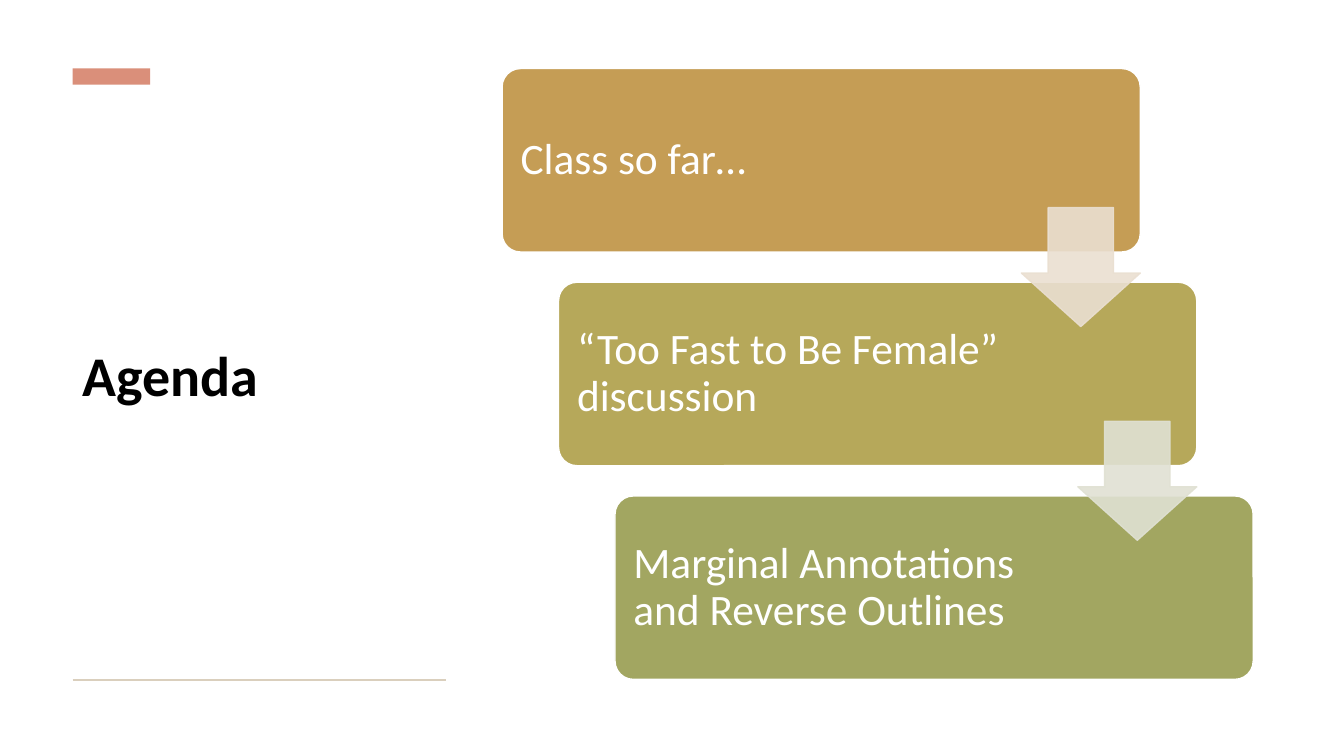
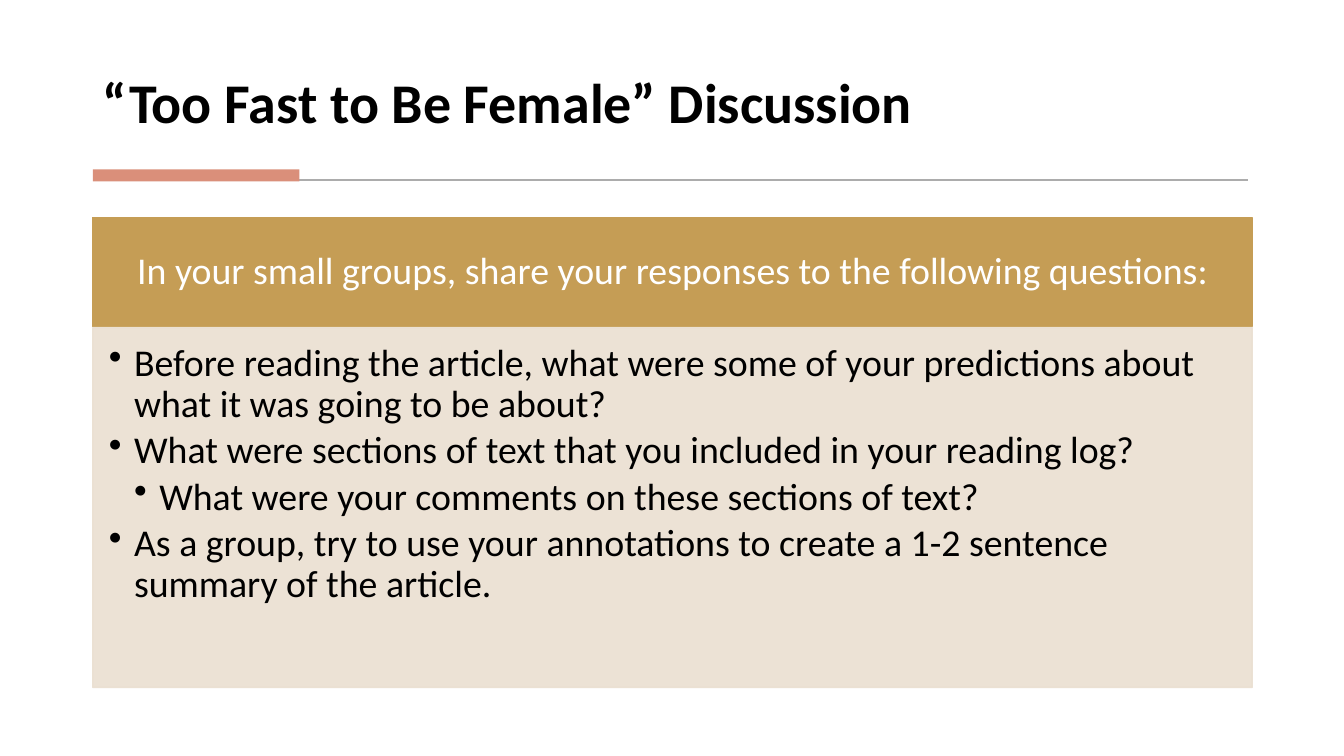
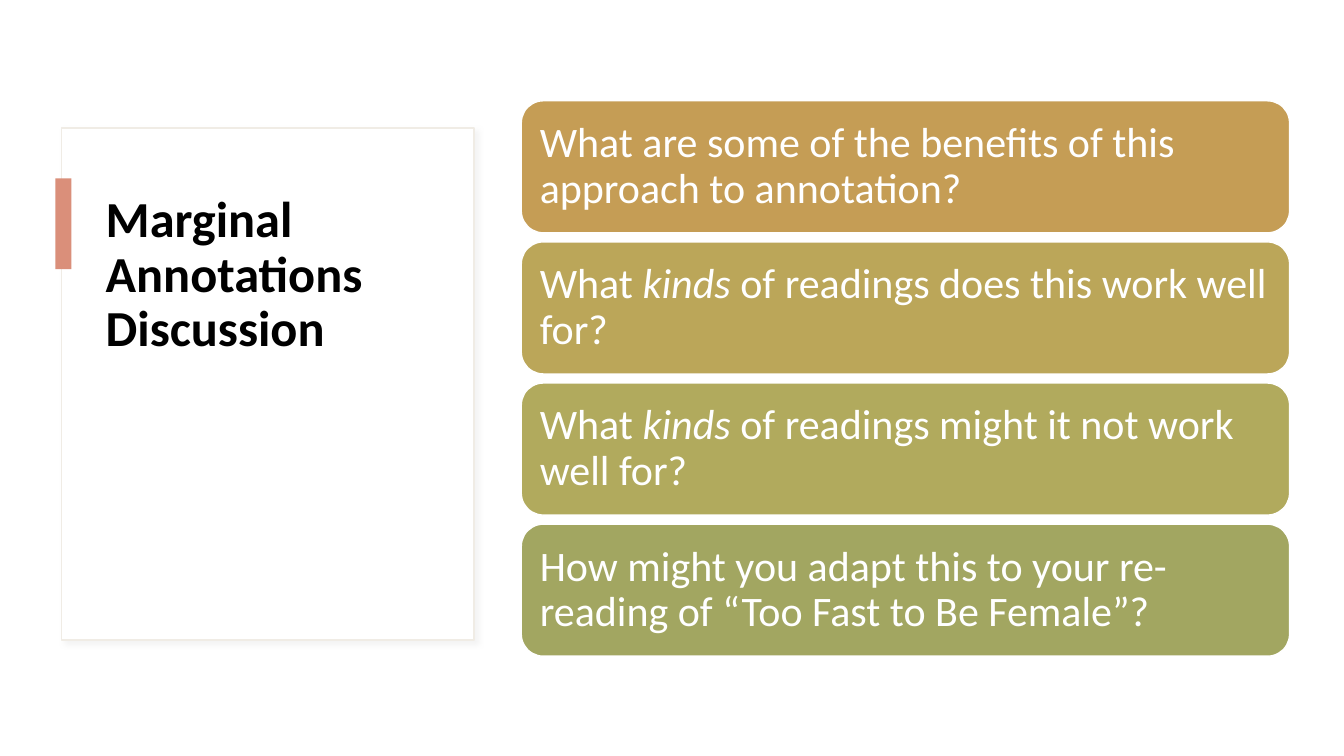
from lxml.etree import SubElement
from pptx import Presentation
from pptx.dml.color import RGBColor
from pptx.enum.shapes import MSO_CONNECTOR, MSO_SHAPE
from pptx.enum.text import MSO_ANCHOR, PP_ALIGN
from pptx.oxml.ns import qn
from pptx.util import Pt

PX = 9144  # EMU per px, 100 px to the inch
FONT = "Calibri"
WHITE, BLACK = "FFFFFF", "000000"
ACCENT, GOLD, OLIVE, SAGE = "DA8F7A", "C59D55", "B6A85A", "A2A661"
SAND, MIST, PANEL_EDGE, SHADOW = "EADFD1", "E0E1D3", "F0ECE5", "D9D9D9"

# Text between asterisks is italic.
AGENDA = [
    ("Class so far…", GOLD),
    ("“Too Fast to Be Female” discussion", OLIVE),
    ("Marginal Annotations and Reverse Outlines", SAGE),
]
AGENDA_ARROWS = [SAND, MIST]
GROUP_PROMPT = "In your small groups, share your responses to the following questions:"
GROUP_QUESTIONS = [
    (0, "Before reading the article, what were some of your predictions about what it was going to be about?"),
    (0, "What were sections of text that you included in your reading log?"),
    (1, "What were your comments on these sections of text?"),
    (0, "As a group, try to use your annotations to create a 1-2 sentence summary of the article."),
]
ANNOTATION_QUESTIONS = [
    ("What are some of the benefits of this approach to annotation?", GOLD),
    ("What *kinds* of readings does this work well for?", "BBA659"),
    ("What *kinds* of readings might it not work well for?", "B1AA5D"),
    ("How might you adapt this to your re-reading of “Too Fast to Be Female”?", SAGE),
]


def px(*lengths):
    return [length * PX for length in lengths]


def rgb(code):
    return RGBColor.from_string(code)


def add_block(slide, box, fill, edge=None, kind=MSO_SHAPE.RECTANGLE, adjust=(), opacity=None):
    block = slide.shapes.add_shape(kind, *px(*box))
    block.shadow.inherit = False
    for index, value in enumerate(adjust):
        block.adjustments[index] = value
    block.fill.solid()
    block.fill.fore_color.rgb = rgb(fill)
    if edge:
        block.line.color.rgb = rgb(edge)
        block.line.width = Pt(1)
    else:
        block.line.fill.background()
    if opacity:
        for color in list(block.element.spPr.iter(qn("a:srgbClr"))):
            SubElement(color, qn("a:alpha"), val=str(opacity * 1000))
    return block


def add_rule(slide, left, right, y, color):
    rule = slide.shapes.add_connector(MSO_CONNECTOR.STRAIGHT, *px(left, y, right, y))
    rule.line.color.rgb = rgb(color)
    rule.line.width = Pt(1.5)
    SubElement(rule.element.spPr, qn("a:effectLst"))


def write(shape, items, size, color=WHITE, bold=None, align=PP_ALIGN.LEFT,
          anchor=MSO_ANCHOR.MIDDLE, insets=(10, 5, 10, 5), bullets=False):
    """Fill a shape with (level, text) paragraphs; insets are left, top, right, bottom."""
    frame = shape.text_frame
    frame.word_wrap = True
    frame.vertical_anchor = anchor
    frame.margin_left, frame.margin_top, frame.margin_right, frame.margin_bottom = px(*insets)
    for number, (level, text) in enumerate(items):
        paragraph = frame.add_paragraph() if number else frame.paragraphs[0]
        paragraph.alignment = align
        paragraph.line_spacing = 0.9
        if bullets:
            paragraph.level = level
            paragraph.space_after = Pt(4)
            properties = paragraph._p.get_or_add_pPr()
            properties.set("marL", str(25 * (level + 1) * PX))
            properties.set("indent", str(-25 * PX))
            SubElement(properties, qn("a:buChar"), char="•")
        font = paragraph.font
        font.name, font.size, font.bold = FONT, Pt(size), bold
        font.color.rgb = rgb(color)
        for part, piece in enumerate(text.split("*")):
            run = paragraph.add_run()
            run.text = piece
            if part % 2:
                run.font.italic = True


def add_title(slide, text, box, anchor, size=40):
    title = slide.shapes.add_textbox(*px(*box))
    write(title, [(0, text)], size, BLACK, bold=True, anchor=anchor)


def add_panel(slide, box):
    """White card with a soft shadow."""
    panel = add_block(slide, box, WHITE, PANEL_EDGE)
    effects = panel.element.spPr.find(qn("a:effectLst"))
    shadow = SubElement(effects, qn("a:outerShdw"), blurRad=str(Pt(4)), dist=str(Pt(3)),
                        dir=str(45 * 60000), algn="tl", rotWithShape="0")
    color = SubElement(shadow, qn("a:srgbClr"), val=SHADOW)
    SubElement(color, qn("a:alpha"), val="30000")


def build_agenda(slide):
    add_title(slide, "Agenda", (72, 105, 370, 541), MSO_ANCHOR.MIDDLE)
    add_block(slide, (72, 68, 77, 16), ACCENT)
    add_rule(slide, 72, 442, 675, "DACFBD")
    corners = [(498 + 56 * step, 68 + 212 * step) for step in range(len(AGENDA))]
    for (left, top), (text, fill) in zip(corners, AGENDA):
        stage = add_block(slide, (left, top, 633, 182), fill, WHITE,
                          MSO_SHAPE.ROUNDED_RECTANGLE, [0.1])
        write(stage, [(0, text)], 31, insets=(13, 13, 187, 13))
    for (left, top), fill in zip(corners, AGENDA_ARROWS):
        add_block(slide, (left + 515, top + 138, 118, 118), fill, fill,
                  MSO_SHAPE.DOWN_ARROW, [0.55, 0.45], opacity=90)


def build_group_discussion(slide):
    add_title(slide, "“Too Fast to Be Female” Discussion", (92, 28, 1149, 111), MSO_ANCHOR.BOTTOM)
    add_rule(slide, 95, 1238, 179, "ACACAC")
    add_block(slide, (92, 168, 205, 12), ACCENT)
    prompt = add_block(slide, (92, 216, 1150, 108), GOLD, GOLD)
    write(prompt, [(0, GROUP_PROMPT)], 27, align=PP_ALIGN.CENTER, insets=(21, 12, 21, 12))
    questions = add_block(slide, (92, 325, 1150, 357), SAND, SAND, opacity=90)
    write(questions, GROUP_QUESTIONS, 27, BLACK, anchor=MSO_ANCHOR.TOP,
          insets=(16, 16, 21, 24), bullets=True)


def build_annotations(slide):
    add_panel(slide, (61, 127, 409, 508))
    add_title(slide, "Marginal Annotations Discussion", (95, 188, 339, 385), MSO_ANCHOR.TOP, 36)
    add_block(slide, (55, 177, 16, 90), ACCENT)
    for row, (text, fill) in enumerate(ANNOTATION_QUESTIONS):
        question = add_block(slide, (517, 100 + 140 * row, 762, 131), fill, WHITE,
                             MSO_SHAPE.ROUNDED_RECTANGLE)
        write(question, [(0, text)], 30, insets=(12, 12, 12, 12))


def main():
    deck = Presentation()
    deck.slide_width, deck.slide_height = px(1333, 750)
    for build in (build_agenda, build_group_discussion, build_annotations):
        build(deck.slides.add_slide(deck.slide_layouts[6]))
    deck.save("out.pptx")


if __name__ == "__main__":
    main()
